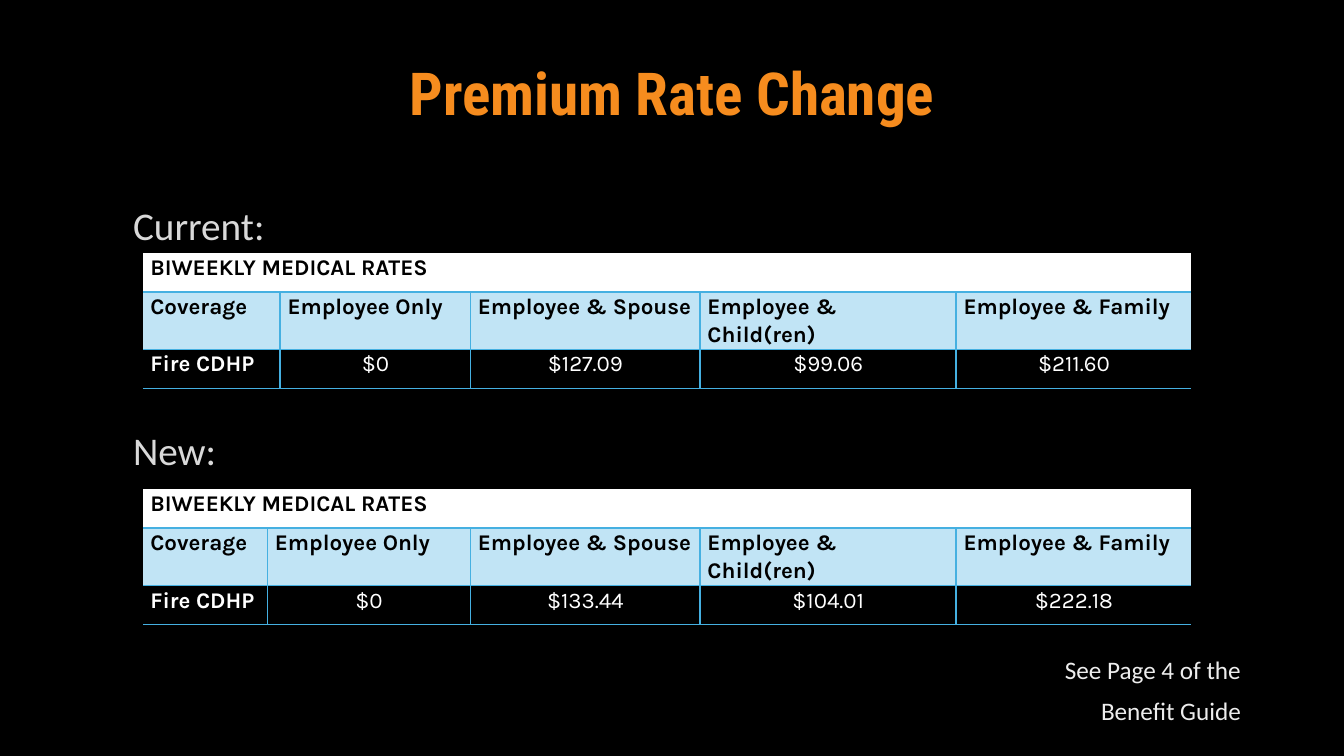
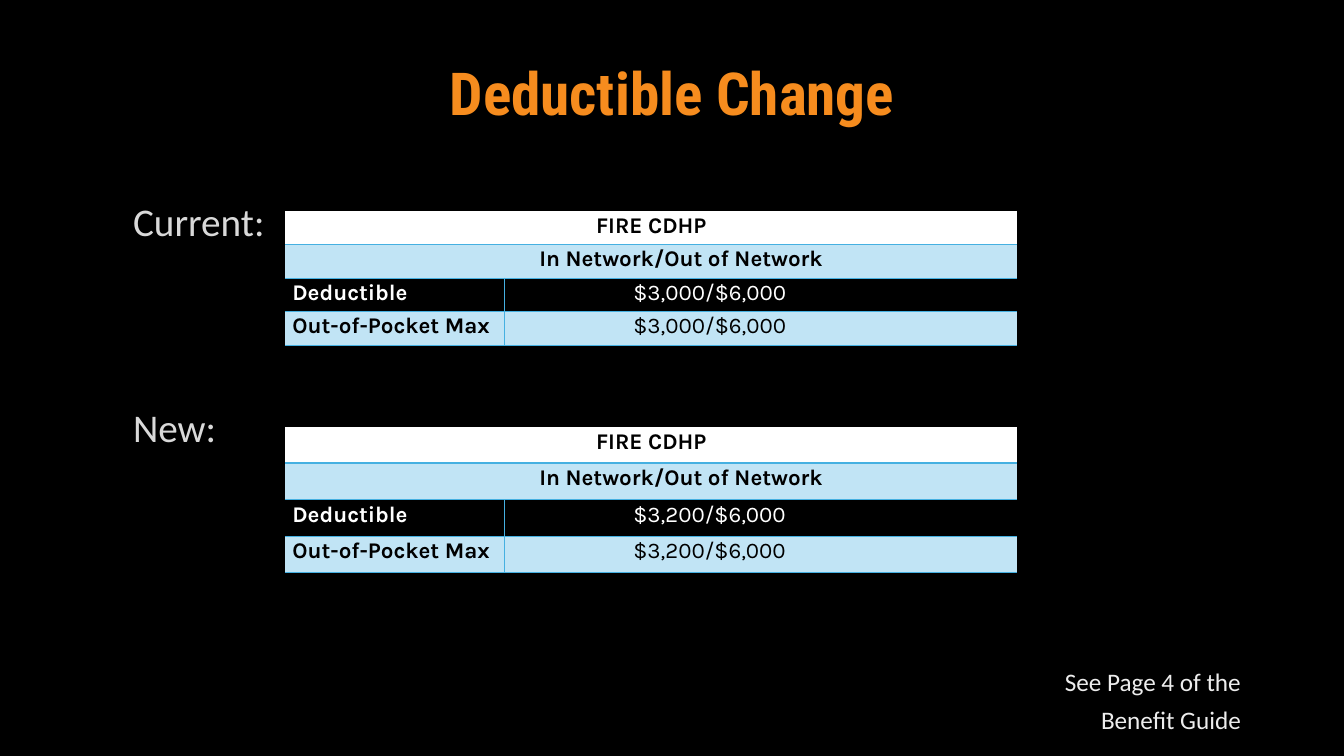
from lxml import etree
from pptx import Presentation
from pptx.dml.color import RGBColor as RGB
from pptx.enum.text import MSO_ANCHOR as ANCHOR, PP_ALIGN as ALIGN
from pptx.oxml.ns import qn
from pptx.util import Pt

BLACK = RGB(0x00, 0x00, 0x00)
WHITE = RGB(0xFF, 0xFF, 0xFF)
ORANGE = RGB(0xF6, 0x8C, 0x1E)
LABEL_GREY = RGB(0xD9, 0xD9, 0xD9)
NOTE_GREY = RGB(0xED, 0xED, 0xED)
PALE_BLUE = RGB(0xC1, 0xE4, 0xF5)
RULE_BLUE = RGB(0x45, 0xB0, 0xE1)

TITLE_FONT, BODY_FONT, TABLE_FONT = "Roboto Condensed", "Calibri", "Karla"
CELL_INSET = 5.4
RATE_HEADS = ["Coverage", "Employee Only", "Employee & Spouse",
              "Employee & Child(ren)", "Employee & Family"]


def set_font(p, name, size, color, bold=False):
    p.font.name, p.font.size, p.font.bold = name, Pt(size), bold
    p.font.color.rgb = color


def add_text(s, box, lines, name, size, color, bold=False,
             align=ALIGN.LEFT, anchor=ANCHOR.TOP, spacing=0.9):
    sp = s.shapes.add_textbox(*map(Pt, box))
    tf = sp.text_frame
    tf.word_wrap = True
    tf.vertical_anchor = anchor
    for i, line in enumerate(lines):
        p = tf.paragraphs[0] if i == 0 else tf.add_paragraph()
        p.text, p.alignment, p.line_spacing = line, align, spacing
        p.space_before = Pt(10 if i else 0)
        set_font(p, name, size, color, bold)


# Slide frame: title, the two section labels and the closing note
def add_frame(prs, title, new_top, note_top, spacing):
    s = prs.slides.add_slide(prs.slide_layouts[6])
    add_text(s, (102, 36, 756, 66), [title], TITLE_FONT, 42.3, ORANGE,
             bold=True, align=ALIGN.CENTER, anchor=ANCHOR.MIDDLE)
    for label, top in (("Current:", 144), ("New:", new_top)):
        add_text(s, (88, top, 112, 40), [label], BODY_FONT, 28, LABEL_GREY,
                 spacing=spacing)
    add_text(s, (693.5, note_top, 200, 60),
             ["See Page 4 of the", "Benefit Guide"], BODY_FONT, 18, NOTE_GREY,
             align=ALIGN.RIGHT, spacing=spacing)
    return s


# Tables
def set_border(cell, side, width):
    """Rule one side of a cell; a width of 0 leaves it open."""
    ln = etree.SubElement(cell._tc.get_or_add_tcPr(), qn("a:ln" + side),
                          w=str(Pt(width)))
    if width:
        fill = etree.SubElement(ln, qn("a:solidFill"))
        etree.SubElement(fill, qn("a:srgbClr"), val=str(RULE_BLUE))
    else:
        etree.SubElement(ln, qn("a:noFill"))


def add_grid(s, left, top, widths, heights, fills, merged_rows):
    frame = s.shapes.add_table(len(heights), len(widths), Pt(left), Pt(top),
                               Pt(sum(widths)), Pt(sum(heights)))
    table = frame.table
    table.first_row = table.horz_banding = False
    for column, width in zip(table.columns, widths):
        column.width = Pt(width)
    last = len(widths) - 1
    for r, (height, fill) in enumerate(zip(heights, fills)):
        table.rows[r].height = Pt(height)
        for c in range(len(widths)):
            cell = table.cell(r, c)
            inner = 0 if r in merged_rows else 1
            set_border(cell, "L", inner if c else 0)
            set_border(cell, "R", inner if c < last else 0)
            set_border(cell, "T", (0, 1.5)[r] if r < 2 else 1)
            set_border(cell, "B", 1 if r else 1.5)
            if fill is None:
                cell.fill.background()
            else:
                cell.fill.solid()
                cell.fill.fore_color.rgb = fill
    for r in merged_rows:
        table.cell(r, 0).merge(table.cell(r, last))
    return table


def write_cell(cell, text, color=BLACK, bold=True, align=ALIGN.LEFT,
               indent=CELL_INSET):
    cell.margin_left, cell.margin_right = Pt(indent), Pt(5)
    cell.margin_top = cell.margin_bottom = 0
    p = cell.text_frame.paragraphs[0]
    p.text, p.alignment, p.line_spacing = text, align, 1.07
    set_font(p, TABLE_FONT, 16, color, bold)


def add_rates(s, top, first_widths, rates):
    table = add_grid(s, 102, top, first_widths + [164, 183, 168],
                     [28, 40, 28], [WHITE, PALE_BLUE, None], [0])
    write_cell(table.cell(0, 0), "BIWEEKLY MEDICAL RATES")
    for c, head in enumerate(RATE_HEADS):
        write_cell(table.cell(1, c), head)
    write_cell(table.cell(2, 0), "Fire CDHP", WHITE)
    for c, rate in enumerate(rates, 1):
        write_cell(table.cell(2, c), rate, WHITE, False, ALIGN.CENTER)


def add_deductibles(s, top, row_height, amounts):
    table = add_grid(s, 203.5, top, [157, 366], [row_height] * 4,
                     [WHITE, PALE_BLUE, None, PALE_BLUE], [0, 1])
    write_cell(table.cell(0, 0), "FIRE CDHP", align=ALIGN.CENTER)
    write_cell(table.cell(1, 0), "In Network/Out of Network",
               align=ALIGN.CENTER, indent=48)
    rows = (("Deductible", WHITE), ("Out-of-Pocket Max", BLACK))
    for r, (head, color) in enumerate(rows, 2):
        write_cell(table.cell(r, 0), head, color)
        write_cell(table.cell(r, 1), amounts, color, False, indent=92)


def main():
    prs = Presentation()
    prs.slide_width, prs.slide_height = Pt(960), Pt(540)
    background = prs.slide_master.background.fill
    background.solid()
    background.fore_color.rgb = BLACK

    # Premium rates
    s = add_frame(prs, "Premium Rate Change", 304.7, 466, 0.9)
    add_rates(s, 180.7, [98, 136], ["$0", "$127.09", "$99.06", "$211.60"])
    add_rates(s, 349.3, [89, 145], ["$0", "$133.44", "$104.01", "$222.18"])

    # Deductibles
    s = add_frame(prs, "Deductible Change", 291, 476.5, 0.8)
    add_deductibles(s, 150.7, 24, "$3,000/$6,000")
    add_deductibles(s, 305, 26, "$3,200/$6,000")

    prs.save("out.pptx")


if __name__ == "__main__":
    main()
